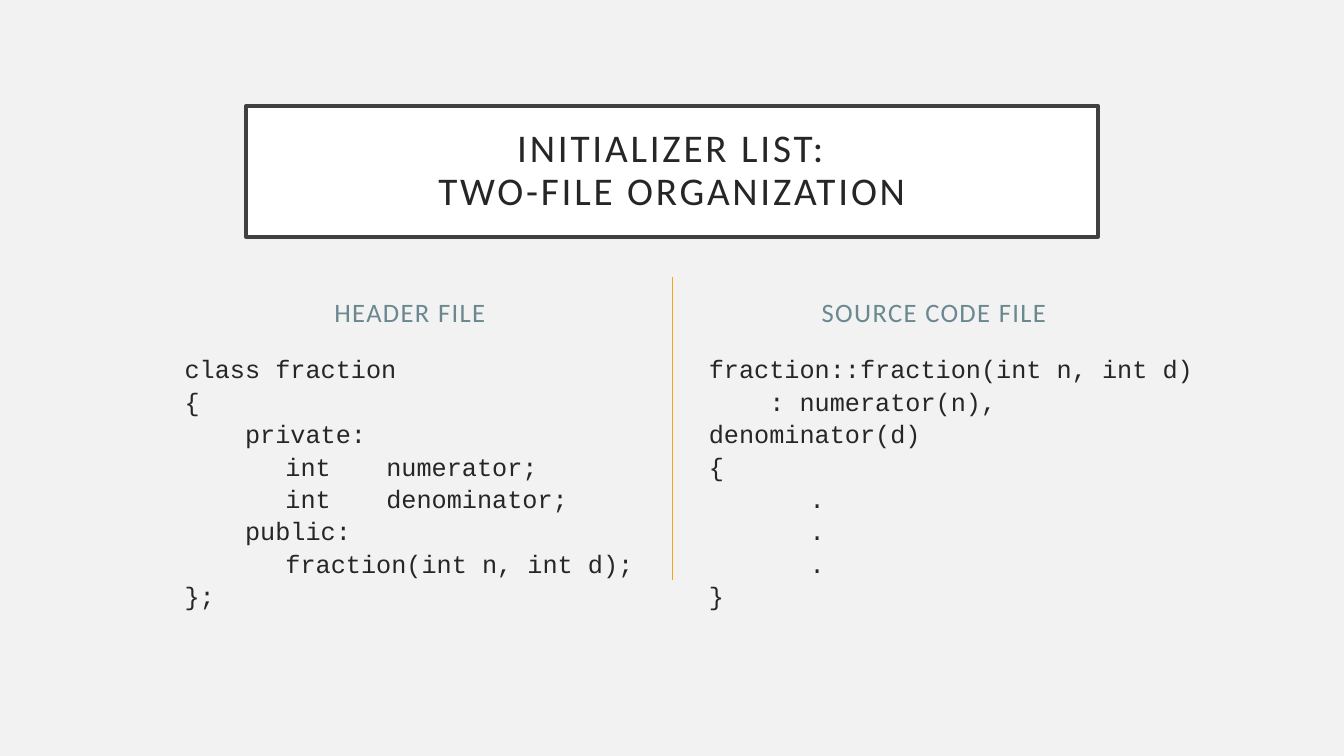
from dataclasses import dataclass

from lxml.etree import SubElement
from pptx import Presentation
from pptx.dml.color import RGBColor
from pptx.enum.shapes import MSO_CONNECTOR as CONNECTOR, MSO_SHAPE as SHAPE
from pptx.enum.text import MSO_ANCHOR as ANCHOR, PP_ALIGN as ALIGN
from pptx.oxml.ns import qn
from pptx.util import Inches, Pt


@dataclass(frozen=True)
class Theme:
    background: str = "F2F2F2"
    panel: str = "FFFFFF"
    border: str = "404040"
    ink: str = "262626"
    heading: str = "6B8891"
    accent: str = "F6A21D"
    sans: str = "Calibri"
    mono: str = "Courier New"
    title_size: float = 28
    heading_size: float = 19
    code_size: float = 18


HEADER_CODE = [
    ("class fraction", 0),
    ("{", 0),
    ("private:", 1),
    ("\tint\tnumerator;", 0),
    ("\tint\tdenominator;", 0),
    ("public:", 1),
    ("\tfraction(int n, int d);", 0),
    ("};", 0),
]
SOURCE_CODE = [
    ("fraction::fraction(int n, int d)", 0),
    (": numerator(n), denominator(d)", 1),
    ("{", 0),
    *[("\t.", 0)] * 3,
    ("}", 0),
]


def rgb(value):
    return RGBColor.from_string(value)


def write(p, text, *, font, size, color, tracking=0, align=ALIGN.LEFT,
          before=0, leading=1.0, indent=0):
    """Fill a paragraph; newlines become line breaks, indent is for the first line."""
    p.alignment, p.space_before, p.line_spacing = align, Pt(before), leading
    pPr = p._p.get_or_add_pPr()
    pPr.set("marL", "0")
    pPr.set("indent", str(Inches(indent)))
    pPr.set("defTabSz", str(Inches(1)))
    for i, line in enumerate(text.split("\n")):
        if i:
            p.add_line_break()
        r = p.add_run()
        r.text = line
        r.font.name, r.font.size = font, Pt(size)
        r.font.color.rgb = rgb(color)
        r._r.get_or_add_rPr().set("spc", str(tracking * 100))


class SlideBuilder:
    """Draws on one slide; lengths are percentages of its width and height."""

    def __init__(self, prs, theme):
        self.theme = theme
        self.width, self.height = prs.slide_width, prs.slide_height
        self.s = prs.slides.add_slide(prs.slide_layouts[6])
        fill = self.s.background.fill
        fill.solid()
        fill.fore_color.rgb = rgb(theme.background)

    def place(self, x, y, w, h):
        return (round(self.width * x / 100), round(self.height * y / 100),
                round(self.width * w / 100), round(self.height * h / 100))

    def text_frame(self, box, anchor):
        tf = self.s.shapes.add_textbox(*self.place(*box)).text_frame
        tf.word_wrap, tf.vertical_anchor = True, anchor
        return tf

    def title(self, text, box):
        t = self.theme
        sp = self.s.shapes.add_shape(SHAPE.RECTANGLE, *self.place(*box))
        sp.shadow.inherit = False
        sp.fill.solid()
        sp.fill.fore_color.rgb = rgb(t.panel)
        sp.line.color.rgb = rgb(t.border)
        sp.line.width = Pt(2.5)
        tf = sp.text_frame
        tf.word_wrap, tf.vertical_anchor = True, ANCHOR.MIDDLE
        tf.margin_left = tf.margin_right = Inches(0.2)
        tf.margin_top = tf.margin_bottom = Inches(0.2)
        write(tf.paragraphs[0], text, font=t.sans, size=t.title_size,
              color=t.ink, tracking=2, align=ALIGN.CENTER, leading=0.9)

    def heading(self, text, box):
        t = self.theme
        tf = self.text_frame(box, ANCHOR.BOTTOM)
        write(tf.paragraphs[0], text, font=t.sans, size=t.heading_size,
              color=t.heading, tracking=1, align=ALIGN.CENTER, before=10)

    def code(self, lines, box):
        """Write (text, level) lines; one level is four characters wide."""
        t = self.theme
        tf = self.text_frame(box, ANCHOR.TOP)
        for i, (text, level) in enumerate(lines):
            p = tf.add_paragraph() if i else tf.paragraphs[0]
            write(p, text, font=t.mono, size=t.code_size, color=t.ink,
                  leading=1.07, indent=0.6 * level)

    def divider(self, x, y, h):
        left, top, _, height = self.place(x, y, 0, h)
        line = self.s.shapes.add_connector(
            CONNECTOR.STRAIGHT, left, top, left, top + height)
        line.line.color.rgb = rgb(self.theme.accent)
        line.line.width = Pt(0.5)
        SubElement(line._element.spPr, qn("a:effectLst"))


def main():
    prs = Presentation()
    prs.slide_width, prs.slide_height = Inches(13.33), Inches(7.5)
    slide = SlideBuilder(prs, Theme())
    columns = [
        ("HEADER FILE", HEADER_CODE, 13, 35),
        ("SOURCE CODE FILE", SOURCE_CODE, 52, 39.68),
    ]
    for name, lines, x, code_width in columns:
        slide.heading(name, (x, 33.73, 35, 10.27))
        slide.code(lines, (x, 45.87, code_width, 37.87))
    slide.title("INITIALIZER LIST:\nTWO-FILE ORGANIZATION", (18.3, 14, 63.4, 17.33))
    slide.divider(50, 36.67, 40)
    prs.save("out.pptx")


if __name__ == "__main__":
    main()
